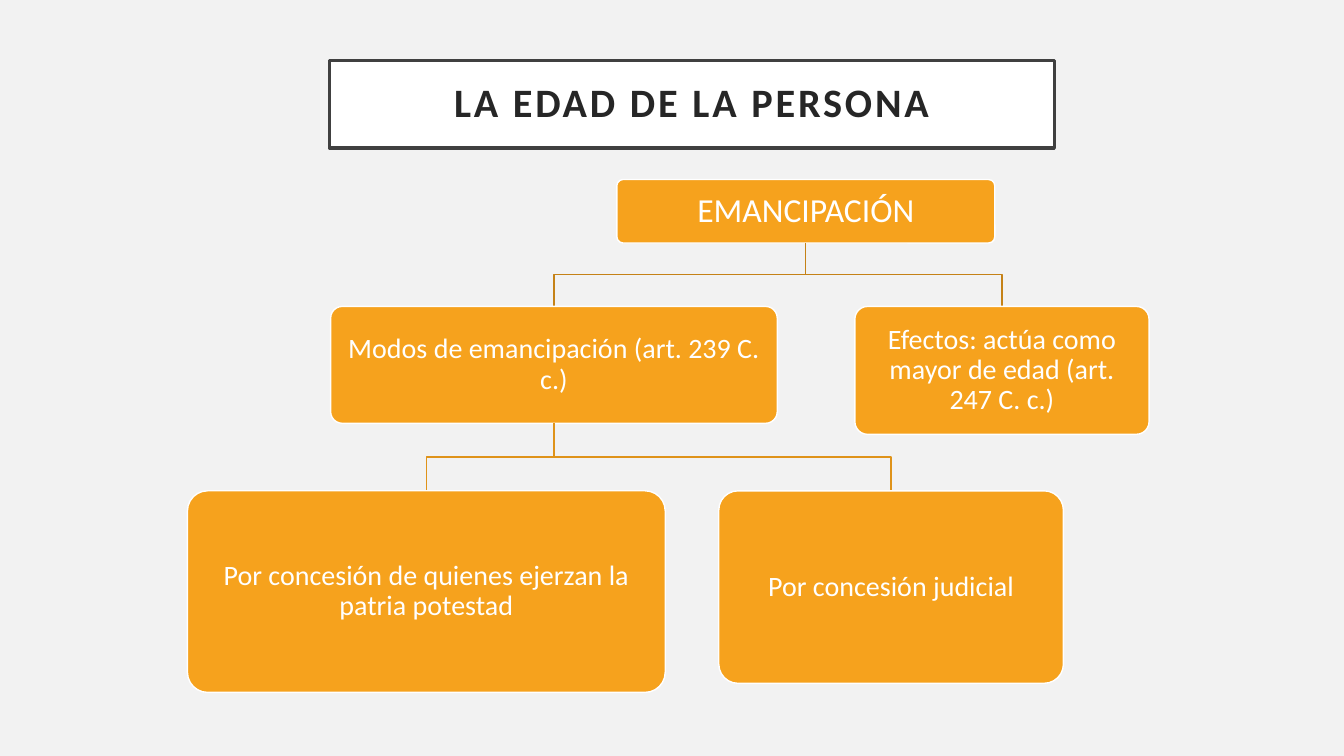
from dataclasses import dataclass

from pptx import Presentation
from pptx.dml.color import RGBColor
from pptx.enum import shapes, text
from pptx.util import Pt


@dataclass(frozen=True)
class Theme:
    font: str = "Calibri"
    background: str = "F2F2F2"
    title_fill: str = "FFFFFF"
    title_line: str = "404040"
    title_text: str = "262626"
    box_fill: str = "F6A21D"
    box_line: str = "FFFFFF"
    box_text: str = "FFFFFF"
    links: tuple = ("C58217", "DF931A")  # one colour per level
    title_size: float = 28.8
    root_size: float = 24
    node_size: float = 20


THEME = Theme()


@dataclass(frozen=True)
class Node:
    label: str
    at: tuple  # left, top, width, height in points
    children: tuple = ()


TREE = Node("EMANCIPACIÓN", (440.6, 128.2, 270, 45.4), (
    Node("Modos de emancipación (art. 239 C. c.)", (236.2, 218.9, 319, 83.5), (
        Node("Por concesión de quienes ejerzan la patria potestad",
             (133.9, 350.6, 341.3, 144)),
        Node("Por concesión judicial", (513.4, 350.6, 246.2, 137.5)),
    )),
    Node("Efectos: actúa como mayor de edad (art. 247 C. c.)",
         (610.6, 218.9, 210.2, 91.4)),
))


def color(value):
    return RGBColor.from_string(value)


def style_shape(sp, fill, line, width):
    sp.fill.solid()
    sp.fill.fore_color.rgb = color(fill)
    sp.line.color.rgb = color(line)
    sp.line.width = Pt(width)


def write(sp, content, size, rgb, inset):
    tf = sp.text_frame
    tf.text = content
    tf.word_wrap = True
    tf.auto_size = text.MSO_AUTO_SIZE.NONE
    tf.vertical_anchor = text.MSO_ANCHOR.MIDDLE
    tf.margin_left = tf.margin_top = tf.margin_right = tf.margin_bottom = Pt(inset)
    p = tf.paragraphs[0]
    p.alignment = text.PP_ALIGN.CENTER
    p.line_spacing = 0.9
    p.space_before = Pt(0)
    r = p.runs[0]
    r.font.name = THEME.font
    r.font.size = Pt(size)
    r.font.color.rgb = color(rgb)
    return r


def add_title(s, content):
    sp = s.shapes.title
    sp.left, sp.top, sp.width, sp.height = map(Pt, (235.4, 43.2, 517.7, 62.6))
    style_shape(sp, THEME.title_fill, THEME.title_line, 2.5)
    sp.line.fill.solid()
    sp.line.color.rgb = color(THEME.title_line)
    r = write(sp, content, THEME.title_size, THEME.title_text, 14.4)
    r.font.bold = True
    r.font._element.set("spc", "200")  # letter spacing of 2 pt


def add_box(s, node, level):
    sp = s.shapes.add_shape(shapes.MSO_SHAPE.ROUNDED_RECTANGLE, *map(Pt, node.at))
    sp.adjustments[0] = 0.1
    sp.shadow.inherit = False
    style_shape(sp, THEME.box_fill, THEME.box_line, 1)
    size, inset = (THEME.node_size, 5.8) if level else (THEME.root_size, 7.2)
    write(sp, node.label, size, THEME.box_text, inset)


def add_link(s, parent, child, rgb):
    """Stepped line from the parent's bottom centre to the child's top centre."""
    left, top, width, height = parent.at
    x1, y1 = left + width / 2, top + height
    x2, y2 = child.at[0] + child.at[2] / 2, child.at[1]
    middle = (y1 + y2) / 2
    builder = s.shapes.build_freeform(Pt(x1), Pt(y1))
    steps = ((x1, middle), (x2, middle), (x2, y2))
    builder.add_line_segments([(Pt(x), Pt(y)) for x, y in steps], close=False)
    sp = builder.convert_to_shape()
    sp.shadow.inherit = False
    sp.fill.background()
    sp.line.color.rgb = color(rgb)
    sp.line.width = Pt(1)


def add_tree(s, node, level=0):
    add_box(s, node, level)
    for child in node.children:
        add_link(s, node, child, THEME.links[level])
        add_tree(s, child, level + 1)


def main():
    prs = Presentation()
    prs.slide_width, prs.slide_height = Pt(960), Pt(540)
    s = prs.slides.add_slide(prs.slide_layouts[5])  # title only
    s.background.fill.solid()
    s.background.fill.fore_color.rgb = color(THEME.background)

    # Title
    add_title(s, "LA EDAD DE LA PERSONA")

    # Hierarchy
    add_tree(s, TREE)

    prs.save("out.pptx")


if __name__ == "__main__":
    main()
